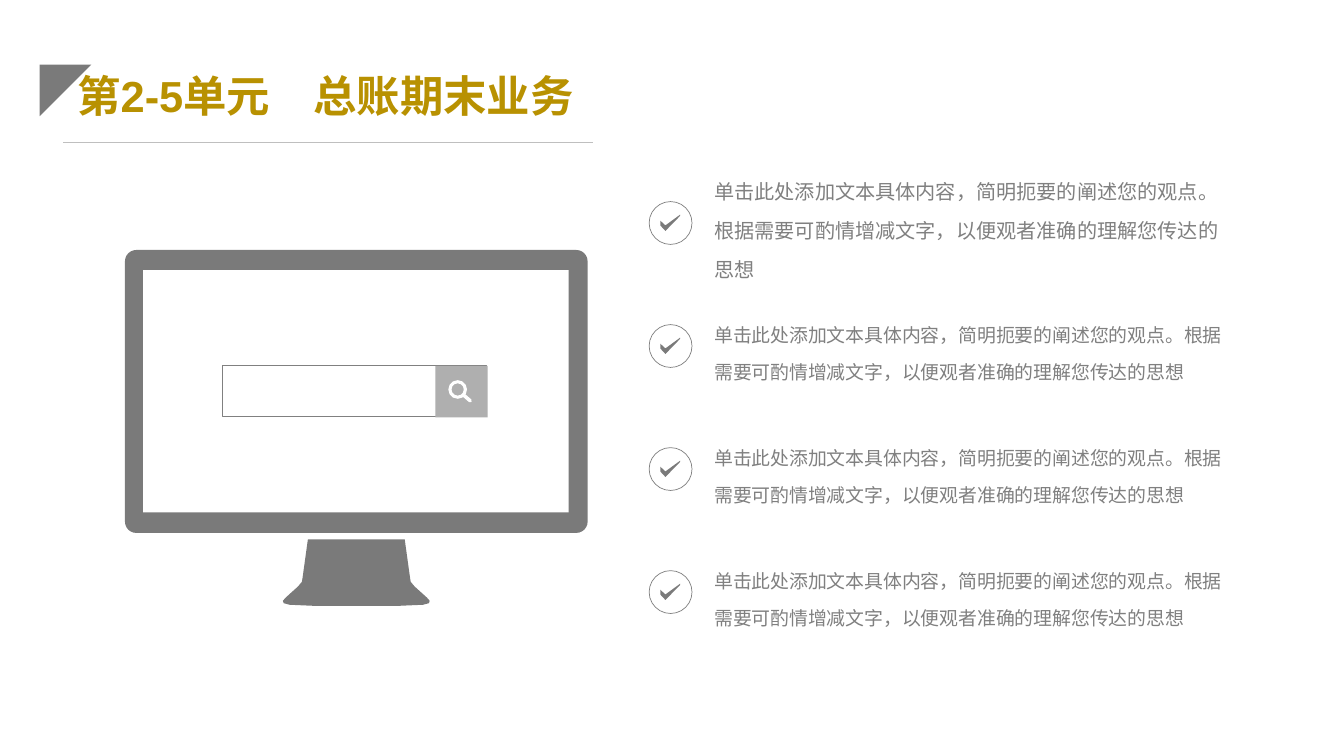
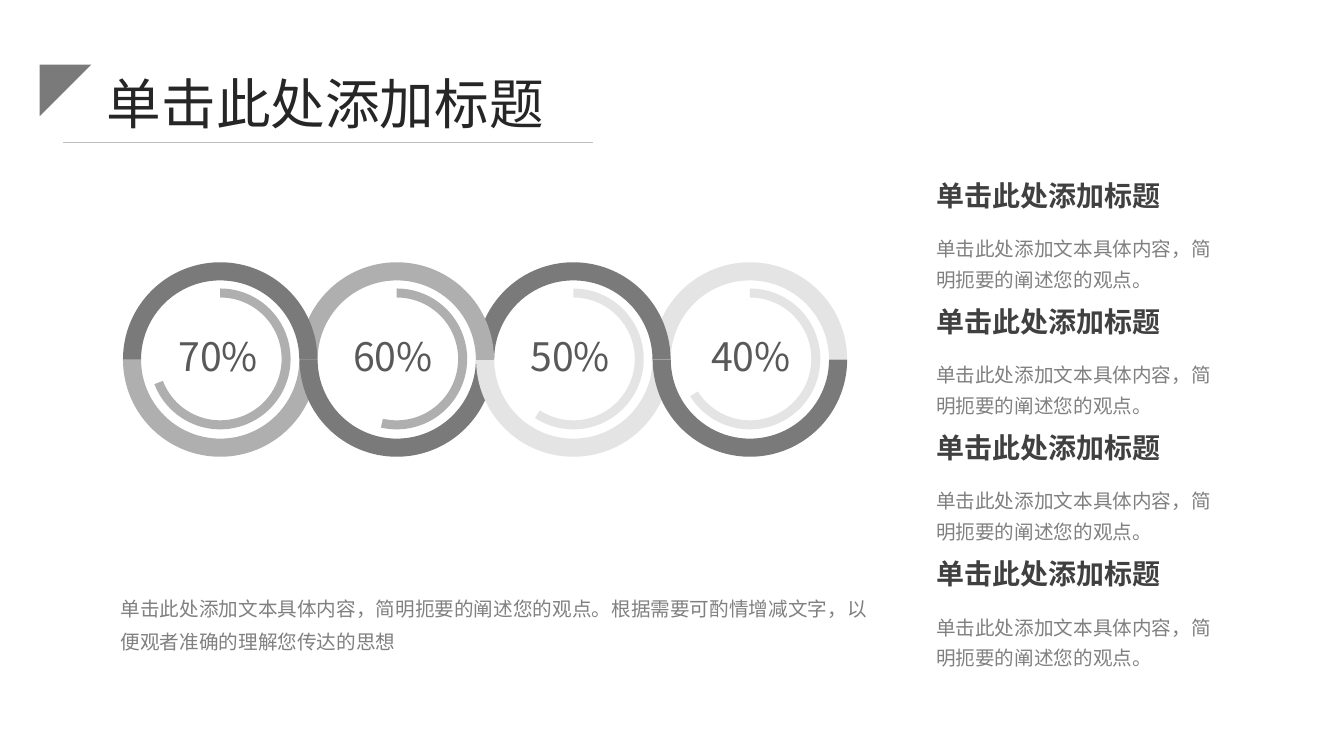
import lxml.etree
import pptx
import pptx.dml.color
import pptx.enum.shapes
import pptx.enum.text
import pptx.oxml.ns
import pptx.util

Cm = pptx.util.Cm
Pt = pptx.util.Pt
qn = pptx.oxml.ns.qn
RGB = pptx.dml.color.RGBColor.from_string
SHAPE = pptx.enum.shapes.MSO_SHAPE
STRAIGHT = pptx.enum.shapes.MSO_CONNECTOR.STRAIGHT
ALIGN = pptx.enum.text.PP_ALIGN
ANCHOR = pptx.enum.text.MSO_ANCHOR

COLORS = {
    "dark": "7A7A7A",
    "mid": "AFAFAF",
    "light": "E4E4E4",
    "white": "FFFFFF",
    "rule": "BFBFBF",
    "body": "808080",
    "heading": "404040",
    "percent": "595959",
    "title": "262626",
    "gold": "B89101",
}
CJK = "Noto Sans CJK SC"
HEADING = "单击此处添加标题"
SUMMARY = "单击此处添加文本具体内容，简明扼要的阐述您的观点。"
DETAIL = SUMMARY + "根据需要可酌情增减文字，以便观者准确的理解您传达的思想"


def add_text(slide, text, box, size, color, font=CJK, bold=False,
             align=ALIGN.LEFT, anchor=ANCHOR.TOP, line=None):
    frame = slide.shapes.add_textbox(*map(Cm, box)).text_frame
    frame.word_wrap = True
    frame.vertical_anchor = anchor
    paragraph = frame.paragraphs[0]
    paragraph.alignment = align
    if line:
        paragraph.line_spacing = Pt(line)
    run = paragraph.add_run()
    run.text = text
    run.font.name = font
    run.font.size = Pt(size)
    run.font.bold = bold
    run.font.color.rgb = RGB(COLORS[color])
    lxml.etree.SubElement(run._r.get_or_add_rPr(), qn("a:ea"), typeface=CJK)


def paint(shape, fill=None, line=None, width=0.5):
    if fill:
        shape.fill.solid()
        shape.fill.fore_color.rgb = RGB(COLORS[fill])
    elif not hasattr(shape, "begin_x"):
        shape.fill.background()
    if line:
        shape.line.color.rgb = RGB(COLORS[line])
        shape.line.width = Pt(width)
    else:
        shape.line.fill.background()
    if hasattr(shape, "begin_x"):
        lxml.etree.SubElement(shape._element.spPr, qn("a:effectLst"))
    else:
        shape.shadow.inherit = False
    return shape


prs = pptx.Presentation()
prs.slide_width = Cm(33.87)
prs.slide_height = Cm(19.05)

titles = [
    ("第2-5单元　总账期末业务", dict(size=31, color="gold", font="Arial", bold=True, line=40)),
    (HEADING, dict(size=39, color="title", line=50)),
]
for title, style in titles:
    slide = prs.slides.add_slide(prs.slide_layouts[6])
    corner = slide.shapes.add_shape(SHAPE.RIGHT_TRIANGLE, Cm(1), Cm(1.63), Cm(1.3), Cm(1.3))
    corner.rotation = 90
    paint(corner, "dark")
    add_text(slide, title, (1, 1.52, 14.4, 1.96), align=ALIGN.CENTER, **style)
    rule = slide.shapes.add_connector(STRAIGHT, Cm(1.6), Cm(3.58), Cm(14.94), Cm(3.58))
    paint(rule, line="rule", width=0.75)

monitor_slide, rings_slide = prs.slides

shapes = monitor_slide.shapes
monitor = shapes.add_shape(SHAPE.ROUNDED_RECTANGLE, Cm(3.15), Cm(6.3), Cm(11.66), Cm(7.13))
monitor.adjustments[0] = 0.04
paint(monitor, "dark")
screen = shapes.add_shape(SHAPE.RECTANGLE, Cm(3.61), Cm(6.81), Cm(10.72), Cm(6.1))
paint(screen, "white")

stand_center = 8.98
stand_half = [(1.22, 13.59), (1.35, 14.53), (1.37, 14.66), (1.47, 14.78), (1.78, 15.06),
              (1.85, 15.14), (1.83, 15.2), (1.68, 15.24), (1, 15.27)]
stand_outline = [(Cm(stand_center + x), Cm(y)) for x, y in stand_half]
stand_outline += [(Cm(stand_center - x), Cm(y)) for x, y in reversed(stand_half)]
stand = shapes.build_freeform(*stand_outline[0])
stand.add_line_segments(stand_outline[1:], close=True)
paint(stand.convert_to_shape(), "dark")

search_field = shapes.add_shape(SHAPE.RECTANGLE, Cm(5.61), Cm(9.22), Cm(6.65), Cm(1.28))
paint(search_field, "white", "body")
search_button = shapes.add_shape(SHAPE.RECTANGLE, Cm(10.97), Cm(9.22), Cm(1.32), Cm(1.3))
paint(search_button, "mid")
lens = shapes.add_shape(SHAPE.DONUT, Cm(11.3), Cm(9.58), Cm(0.47), Cm(0.47))
lens.adjustments[0] = 0.17
paint(lens, "white")
handle = shapes.add_connector(STRAIGHT, Cm(11.7), Cm(9.97), Cm(11.85), Cm(10.1))
paint(handle, line="white", width=2.5)
handle.line._ln.set("cap", "rnd")

row_left, row_top, row_step = 16.36, 5.08, 3.1
tick = [(0.28, 0.6), (0.41, 0.74), (0.78, 0.36), (0.78, 0.33), (0.41, 0.6), (0.28, 0.48)]
for row, (size, line) in enumerate([(14.4, 27.6)] + [(13.5, 26.2)] * 3):
    top = row_top + row * row_step
    circle = shapes.add_shape(SHAPE.OVAL, Cm(row_left), Cm(top), Cm(1.08), Cm(1.08))
    paint(circle, line="body")
    tick_outline = [(Cm(row_left + x), Cm(top + y)) for x, y in tick]
    tick_mark = shapes.build_freeform(*tick_outline[0])
    tick_mark.add_line_segments(tick_outline[1:], close=True)
    paint(tick_mark.convert_to_shape(), "dark")
    add_text(monitor_slide, DETAIL, (17.75, top - 0.61, 13.67, 2.31), size, "body",
             anchor=ANCHOR.MIDDLE, line=line)

ring_left, ring_step, ring_size = 3.1, 4.45, 4.9
progress_size = 3.55
progress_inset = (ring_size - progress_size) / 2
upper, lower = (180, 0), (0, 180)
arcs = [
    (3, upper, "light"), (2, upper, "dark"),
    (0, lower, "mid"), (1, lower, "dark"), (2, lower, "light"), (3, lower, "dark"),
    (1, upper, "mid"), (0, upper, "dark"),
]
bands = [(ring_left + ring * ring_step, 6.61, ring_size, angles, 0.093, color)
         for ring, angles, color in arcs]
progress = [("70%", 4.11, 159, "mid"), ("60%", 8.51, 103, "mid"),
            ("50%", 12.98, 123, "light"), ("40%", 17.53, 148, "light")]
bands += [(ring_left + ring * ring_step + progress_inset, 7.27, progress_size, (270, end), 0.064, color)
          for ring, (_, _, end, color) in enumerate(progress)]
for left, top, size, (start, end), thickness, color in bands:
    arc = rings_slide.shapes.add_shape(SHAPE.BLOCK_ARC, Cm(left), Cm(top), Cm(size), Cm(size))
    arc.adjustments[0] = start * 0.6
    arc.adjustments[1] = end * 0.6
    arc.adjustments[2] = thickness
    paint(arc, color)

for percent, left, _, _ in progress:
    add_text(rings_slide, percent, (left, 8.41, 2.78, 1.37), 28, "percent",
             align=ALIGN.CENTER, line=29.4)

for row in range(4):
    top = 4.39 + row * 3.18
    add_text(rings_slide, HEADING, (23.34, top, 7.77, 1.07), 20, "heading",
             bold=True, anchor=ANCHOR.BOTTOM)
    add_text(rings_slide, SUMMARY, (23.34, top + 1.27, 7.77, 1.7), 14, "body", line=22)

add_text(rings_slide, DETAIL, (2.79, 14.68, 19.51, 2.24), 14, "body", line=23.6)

prs.save("out.pptx")
